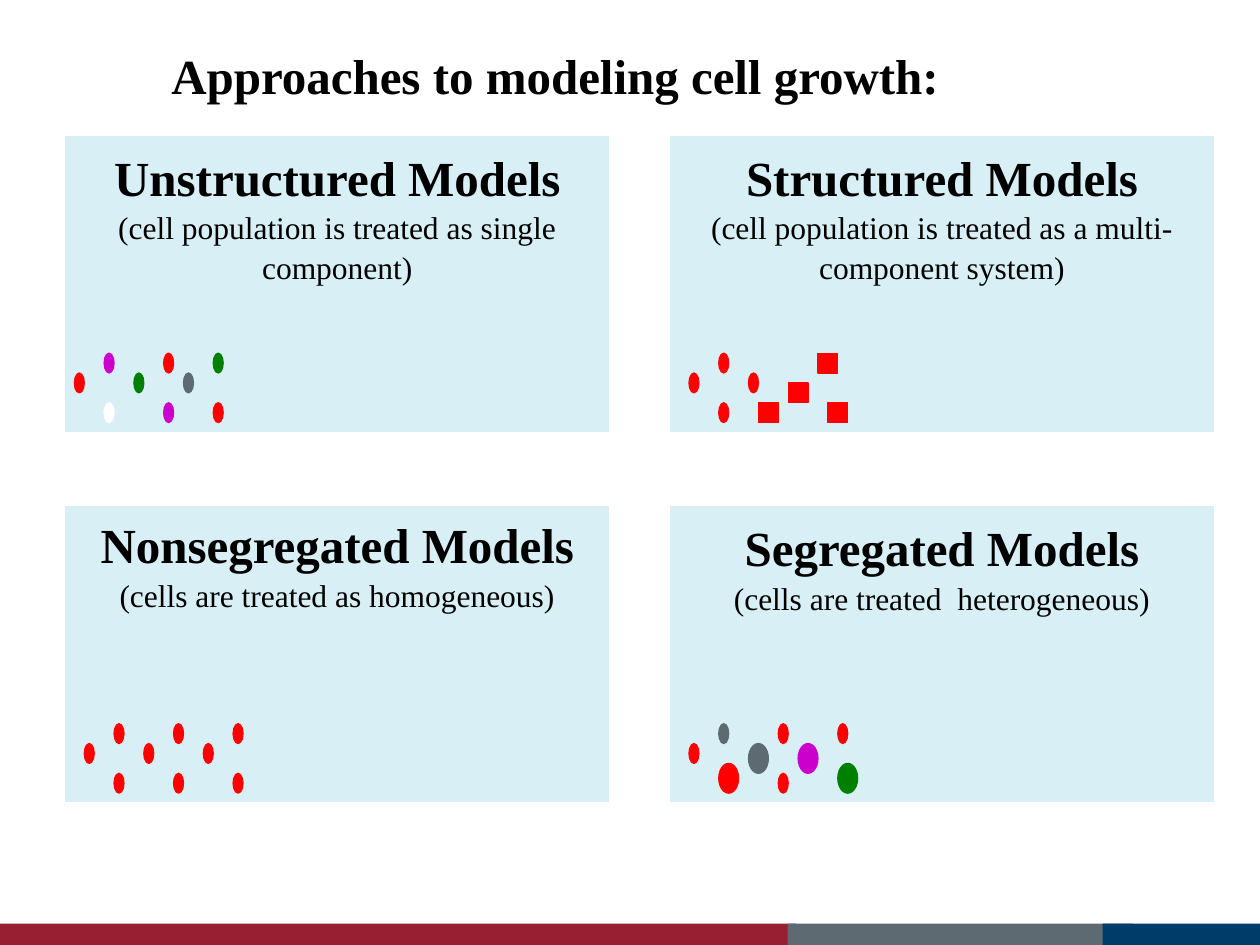
from typing import NamedTuple

from pptx import Presentation
from pptx import util as u
from pptx.dml.color import RGBColor
from pptx.enum import shapes, text

FONT = "Times New Roman"
RED, GREEN, PURPLE = "FF0000", "008000", "CC00CC"
GRAY, WHITE, BLACK = "5E6A71", "FFFFFF", "000000"
PANEL_FILL = "D8F0F5"
PANEL_WIDTH, PANEL_HEIGHT = 11, 6
LEFT, RIGHT = 1.3, 13.49
TOP, BOTTOM = 2.72, 10.19
UNIT = 0.2  # grid step of the cells, in cm

OVAL = shapes.MSO_SHAPE.OVAL
RECTANGLE = shapes.MSO_SHAPE.RECTANGLE


class Cell(NamedTuple):
    """A cell placed and sized in grid units from its panel's corner."""
    column: int
    row: int
    color: str = RED
    width: int = 1
    height: int = 2
    kind: shapes.MSO_SHAPE = OVAL


class Panel(NamedTuple):
    left: float
    top: float
    heading: str
    note: str
    text_top: float
    text_height: float
    cells: list[Cell]


class Bar(NamedTuple):
    left: float
    width: float
    color: str


def large(column: int, row: int, color: str) -> Cell:
    return Cell(column, row, color, 2, 3)


def square(column: int, row: int) -> Cell:
    return Cell(column, row, RED, 2, 2, RECTANGLE)


PANELS = [
    Panel(LEFT, TOP, "Unstructured Models",
          "(cell population is treated as single component)", TOP, 3.76,
          [Cell(1, 24), Cell(4, 27, WHITE), Cell(7, 24, GREEN),
           Cell(10, 27, PURPLE), Cell(4, 22, PURPLE), Cell(10, 22),
           Cell(12, 24, GRAY), Cell(15, 27), Cell(15, 22, GREEN)]),
    Panel(RIGHT, TOP, "Structured Models",
          "(cell population is treated as a multi-component system)", TOP, 3.76,
          [Cell(2, 24), Cell(5, 27), Cell(8, 24), Cell(5, 22),
           square(9, 27), square(12, 25), square(16, 27), square(15, 22)]),
    Panel(LEFT, BOTTOM, "Nonsegregated Models",
          "(cells are treated as homogeneous)", 10.13, 3,
          [Cell(column, 24) for column in (2, 8, 14)]
          + [Cell(column, row) for column in (5, 11, 17) for row in (22, 27)]),
    Panel(RIGHT, BOTTOM, "Segregated Models",
          "(cells are treated  heterogeneous)", BOTTOM, 3.43,
          [Cell(2, 24), large(5, 26, RED), large(8, 24, GRAY), Cell(11, 27),
           Cell(5, 22, GRAY), Cell(11, 22), large(13, 24, PURPLE),
           large(17, 26, GREEN), Cell(17, 22)]),
]

BARS = [Bar(0, 16.05, "981E32"), Bar(15.88, 6.96, GRAY), Bar(22.23, 3.17, "003C69")]


def rgb(value: str) -> RGBColor:
    return RGBColor.from_string(value)


def add_block(slide, kind, left: float, top: float, width: float,
              height: float, fill: str, line: str | None = None) -> None:
    """Add a flat filled shape, outlined only when a line colour is given."""
    shape = slide.shapes.add_shape(
        kind, u.Cm(left), u.Cm(top), u.Cm(width), u.Cm(height))
    shape.shadow.inherit = False
    shape.fill.solid()
    shape.fill.fore_color.rgb = rgb(fill)
    if line is None:
        shape.line.fill.background()
    else:
        shape.line.color.rgb = rgb(line)
        shape.line.width = u.Pt(0.75)


def format_paragraph(paragraph, size: int, bold: bool, alignment) -> None:
    paragraph.alignment = alignment
    paragraph.line_spacing = 1.05
    paragraph.space_before = u.Pt(0)
    paragraph.font.name = FONT
    paragraph.font.size = u.Pt(size)
    paragraph.font.bold = bold
    paragraph.font.color.rgb = rgb(BLACK)


def format_frame(frame, wrap: bool) -> None:
    frame.word_wrap = wrap
    frame.auto_size = text.MSO_AUTO_SIZE.NONE
    frame.vertical_anchor = text.MSO_ANCHOR.TOP
    frame.margin_top = u.Cm(0.19)


def add_title(slide, wording: str) -> None:
    title = slide.shapes.title
    title.left, title.top = u.Cm(3.2), u.Cm(0.66)
    title.width, title.height = u.Cm(16.15), u.Cm(1.45)
    title.text_frame.text = wording
    format_frame(title.text_frame, wrap=False)
    format_paragraph(title.text_frame.paragraphs[0], 28, True, text.PP_ALIGN.LEFT)


def add_panel(slide, panel: Panel) -> None:
    add_block(slide, RECTANGLE, panel.left, panel.top,
              PANEL_WIDTH, PANEL_HEIGHT, PANEL_FILL, WHITE)
    box = slide.shapes.add_textbox(
        u.Cm(panel.left), u.Cm(panel.text_top),
        u.Cm(PANEL_WIDTH), u.Cm(panel.text_height))
    frame = box.text_frame
    format_frame(frame, wrap=True)
    frame.text = f"{panel.heading}\n{panel.note}"
    heading, note = frame.paragraphs
    format_paragraph(heading, 28, True, text.PP_ALIGN.CENTER)
    format_paragraph(note, 18, False, text.PP_ALIGN.CENTER)
    for cell in panel.cells:
        add_block(slide, cell.kind,
                  panel.left + cell.column * UNIT, panel.top + cell.row * UNIT,
                  cell.width * UNIT, cell.height * UNIT, cell.color, cell.color)


def main() -> None:
    presentation = Presentation()
    presentation.slide_width = u.Cm(25.4)
    presentation.slide_height = u.Cm(19.05)
    slide = presentation.slides.add_slide(
        presentation.slide_layouts.get_by_name("Title Only"))
    for bar in BARS:
        add_block(slide, RECTANGLE, bar.left, 18.62, bar.width, 0.43, bar.color)
    for panel in PANELS:
        add_panel(slide, panel)
    add_title(slide, "Approaches to modeling cell growth:")
    presentation.save("out.pptx")


if __name__ == "__main__":
    main()
